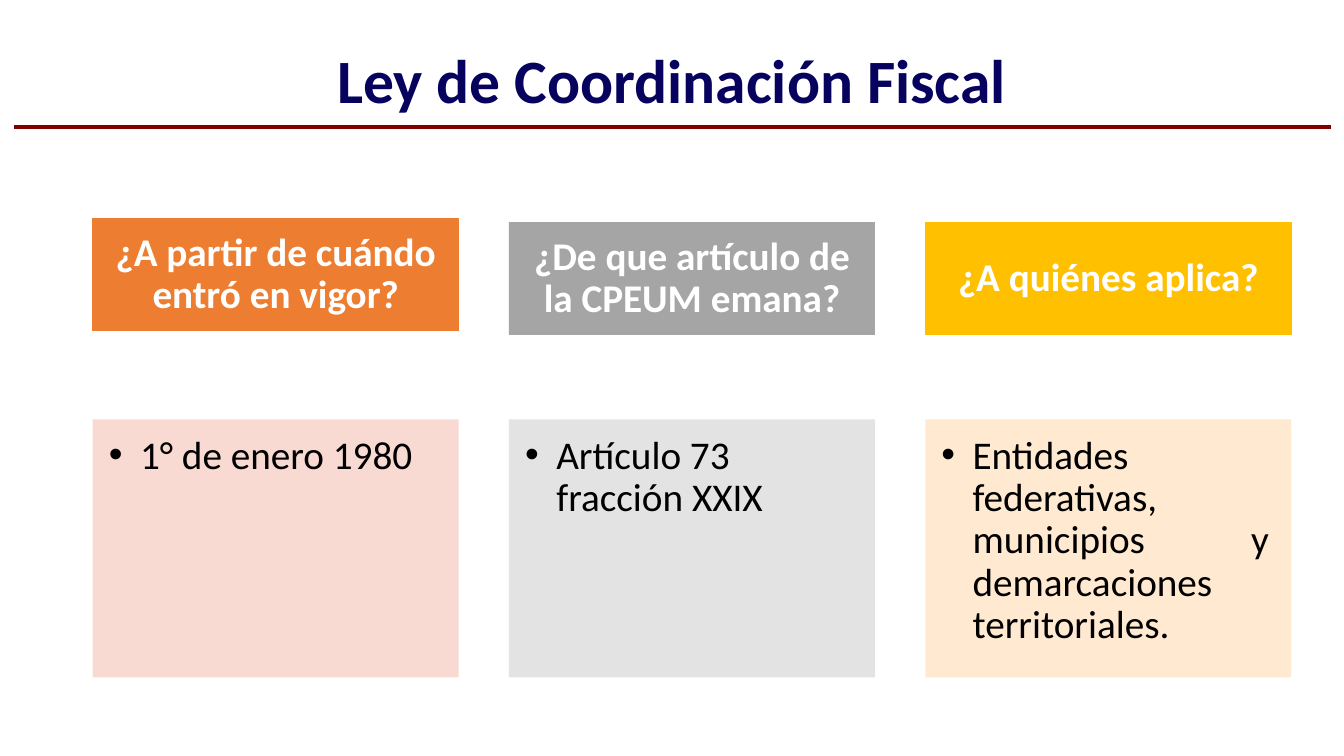
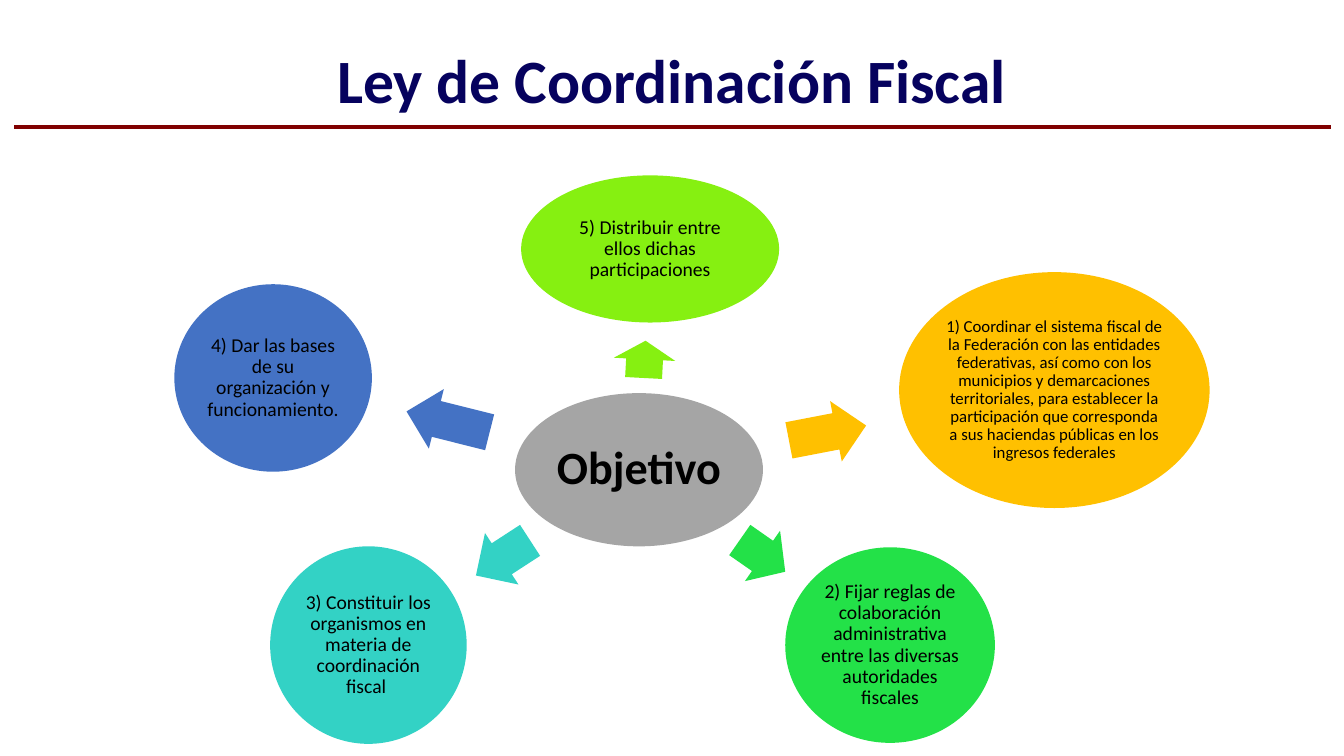
from dataclasses import dataclass

from lxml import etree
from pptx import Presentation
from pptx.dml.color import RGBColor
from pptx.enum.shapes import MSO_CONNECTOR, MSO_SHAPE
from pptx.enum.text import MSO_ANCHOR, PP_ALIGN
from pptx.oxml.ns import qn
from pptx.util import Emu, Inches, Pt

EMU_PER_PX = 9144  # 100 px to the inch
FONT = "Calibri"

RECTANGLE = MSO_SHAPE.RECTANGLE
ELLIPSE = MSO_SHAPE.OVAL
RIGHT_ARROW = MSO_SHAPE.RIGHT_ARROW
STRAIGHT = MSO_CONNECTOR.STRAIGHT
TOP, MIDDLE = MSO_ANCHOR.TOP, MSO_ANCHOR.MIDDLE
LEFT, CENTER, JUSTIFY = PP_ALIGN.LEFT, PP_ALIGN.CENTER, PP_ALIGN.JUSTIFY

NAVY = RGBColor(0x06, 0x02, 0x5E)
MAROON = RGBColor(0x80, 0x00, 0x00)
WHITE = RGBColor(0xFF, 0xFF, 0xFF)
BLACK = RGBColor(0x00, 0x00, 0x00)
ORANGE = RGBColor(0xED, 0x7D, 0x31)
GRAY = RGBColor(0xA5, 0xA5, 0xA5)
GOLD = RGBColor(0xFF, 0xC0, 0x00)
PALE_ORANGE = RGBColor(0xF8, 0xD7, 0xCE)
PALE_GRAY = RGBColor(0xE1, 0xE1, 0xE1)
PALE_GOLD = RGBColor(0xFF, 0xE8, 0xCC)
LIME = RGBColor(0x86, 0xF0, 0x11)
GREEN = RGBColor(0x23, 0xE1, 0x48)
TURQUOISE = RGBColor(0x33, 0xD2, 0xC5)
BLUE = RGBColor(0x44, 0x72, 0xC4)

TITLE = "Ley de Coordinación Fiscal"
COLUMN_LEFT, COLUMN_PITCH, COLUMN_WIDTH = 92, 413, 363
QUESTION_HEIGHT = 111
ANSWER_TOP, ANSWER_HEIGHT = 416, 256
ANSWER_INDENT = 31
ARROW_THICKNESS = 61


@dataclass(frozen=True)
class Box:
    left: int
    top: int
    width: int
    height: int


@dataclass(frozen=True)
class Column:
    question: str
    answer: str
    color: RGBColor
    pale: RGBColor
    question_top: int = 221
    answer_align: PP_ALIGN = JUSTIFY


@dataclass(frozen=True)
class Goal:
    text: str
    color: RGBColor
    ellipse: Box
    arrow: Box
    angle: float
    size: int = 14
    inset: int = 2


COLUMNS = (
    Column("¿A partir de cuándo entró en vigor?", "1° de enero 1980",
           ORANGE, PALE_ORANGE, question_top=217),
    Column("¿De que artículo de la CPEUM emana?", "Artículo 73 fracción XXIX",
           GRAY, PALE_GRAY, answer_align=LEFT),
    Column("¿A quiénes aplica?",
           "Entidades federativas, municipios y demarcaciones territoriales.",
           GOLD, PALE_GOLD),
)

GOALS = (
    Goal("1) Coordinar el sistema fiscal de la Federación con las entidades "
         "federativas, así como con los municipios y demarcaciones "
         "territoriales, para establecer la participación que corresponda a "
         "sus haciendas públicas en los ingresos federales",
         GOLD, Box(892, 270, 308, 234), Box(782, 399, 78, ARROW_THICKNESS),
         349.1, size=12, inset=1),
    Goal("5) Distribuir entre ellos dichas participaciones",
         LIME, Box(517, 174, 256, 146), Box(621, 326, 37, ARROW_THICKNESS), 273),
    Goal("2) Fijar reglas de colaboración administrativa entre las diversas "
         "autoridades fiscales",
         GREEN, Box(779, 543, 208, 194), Box(729, 521, 55, ARROW_THICKNESS), 34.9),
    Goal("3) Constituir los organismos en materia de coordinación fiscal ",
         TURQUOISE, Box(268, 542, 195, 196), Box(467, 523, 64, ARROW_THICKNESS), 147),
    Goal("4) Dar las bases de su organización y funcionamiento.",
         BLUE, Box(173, 282, 196, 186), Box(402, 388, 85, ARROW_THICKNESS), 194.1),
)


def px(length: int) -> Emu:
    return Emu(length * EMU_PER_PX)


def frame(box: Box) -> tuple[Emu, Emu, Emu, Emu]:
    return px(box.left), px(box.top), px(box.width), px(box.height)


def write(shape, text: str, *, size: int, color: RGBColor = BLACK,
          bold: bool = False, align: PP_ALIGN = CENTER,
          anchor: MSO_ANCHOR = MIDDLE,
          insets: tuple[int, int, int, int] = (2, 2, 2, 2)) -> None:
    """Fill the shape with one paragraph; insets are left, top, right, bottom."""
    text_frame = shape.text_frame
    text_frame.word_wrap = True
    text_frame.vertical_anchor = anchor
    (text_frame.margin_left, text_frame.margin_top,
     text_frame.margin_right, text_frame.margin_bottom) = map(px, insets)
    paragraph = text_frame.paragraphs[0]
    paragraph.alignment = align
    paragraph.line_spacing = 0.9
    run = paragraph.add_run()
    run.text = text
    run.font.name = FONT
    run.font.size = Pt(size)
    run.font.bold = bold
    run.font.color.rgb = color


def add_bullet(shape, indent: int) -> None:
    properties = shape.text_frame.paragraphs[0]._p.get_or_add_pPr()
    properties.set("marL", str(px(indent)))
    properties.set("indent", str(-px(indent)))
    etree.SubElement(properties, qn("a:buFont"), typeface="Arial")
    etree.SubElement(properties, qn("a:buChar"), char="•")


def set_opacity(shape, percent: int) -> None:
    color = shape.fill._xPr.find(qn("a:solidFill"))[0]
    etree.SubElement(color, qn("a:alpha"), val=str(percent * 1000))


def add_filled(slide, kind: MSO_SHAPE, box: Box, color: RGBColor):
    shape = slide.shapes.add_shape(kind, *frame(box))
    shape.shadow.inherit = False
    shape.fill.solid()
    shape.fill.fore_color.rgb = color
    shape.line.fill.background()
    return shape


def add_titled_slide(presentation):
    slide = presentation.slides.add_slide(presentation.slide_layouts[6])
    heading = slide.shapes.add_textbox(*frame(Box(92, 40, 1150, 86)))
    write(heading, TITLE, size=44, color=NAVY, bold=True, insets=(10, 5, 10, 5))
    rule = slide.shapes.add_connector(STRAIGHT, px(14), px(126), px(1320), px(126))
    rule.line.color.rgb = MAROON
    rule.line.width = Pt(3)
    etree.SubElement(rule._element.spPr, qn("a:effectLst"))
    return slide


def draw_column(slide, column: Column, left: int) -> None:
    question = add_filled(
        slide, RECTANGLE,
        Box(left, column.question_top, COLUMN_WIDTH, QUESTION_HEIGHT), column.color)
    question.line.color.rgb = column.color
    question.line.width = Pt(0.5)
    write(question, column.question, size=28, color=WHITE, bold=True,
          insets=(22, 12, 22, 12))

    answer = add_filled(
        slide, RECTANGLE,
        Box(left, ANSWER_TOP, COLUMN_WIDTH, ANSWER_HEIGHT), column.pale)
    set_opacity(answer, 90)
    write(answer, column.answer, size=28, align=column.answer_align, anchor=TOP,
          insets=(16, 16, 22, 24))
    add_bullet(answer, ANSWER_INDENT)


def draw_goal(slide, goal: Goal) -> None:
    arrow = add_filled(slide, RIGHT_ARROW, goal.arrow, goal.color)
    arrow.adjustments[0] = 0.6
    arrow.adjustments[1] = 0.5
    arrow.rotation = goal.angle
    ellipse = add_filled(slide, ELLIPSE, goal.ellipse, goal.color)
    write(ellipse, goal.text, size=goal.size, insets=(goal.inset,) * 4)


def build_questions_slide(presentation) -> None:
    slide = add_titled_slide(presentation)
    for index, column in enumerate(COLUMNS):
        draw_column(slide, column, COLUMN_LEFT + index * COLUMN_PITCH)


def build_goals_slide(presentation) -> None:
    slide = add_titled_slide(presentation)
    hub = add_filled(slide, ELLIPSE, Box(511, 390, 246, 152), GRAY)
    write(hub, "Objetivo", size=33, bold=True, insets=(5, 5, 5, 5))
    for goal in GOALS:
        draw_goal(slide, goal)


def main() -> None:
    presentation = Presentation()
    presentation.slide_width = Inches(40 / 3)
    presentation.slide_height = Inches(7.5)
    build_questions_slide(presentation)
    build_goals_slide(presentation)
    presentation.save("out.pptx")


if __name__ == "__main__":
    main()
